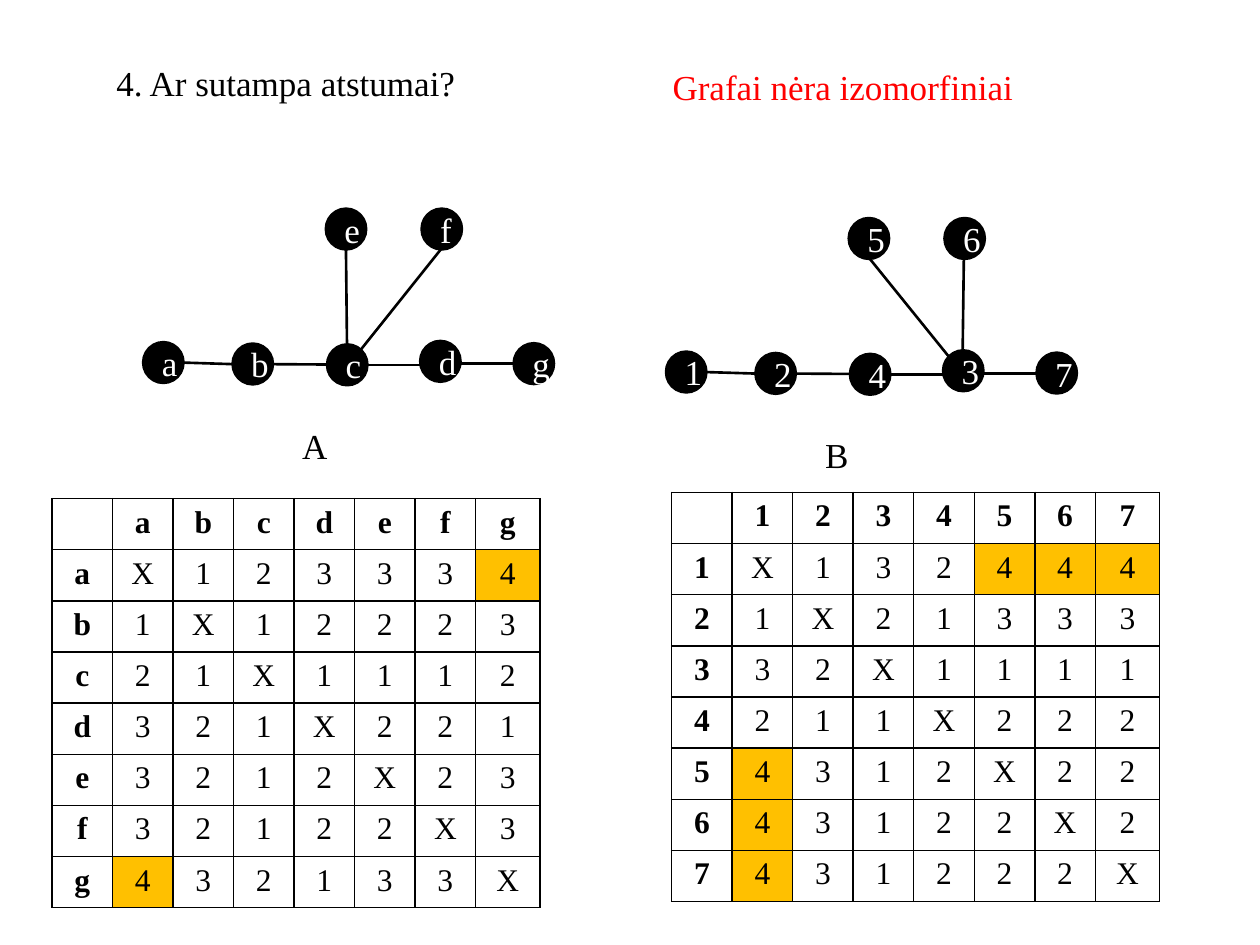
"""Build a slide comparing the distances within two graphs."""

from dataclasses import dataclass

import lxml.etree
import pptx
import pptx.dml.color
import pptx.enum.shapes
import pptx.enum.text
import pptx.oxml.ns
import pptx.util

Pt = pptx.util.Pt
Line = tuple[float, float, float, float]

FONT = "Times New Roman"
COLORS = {"ink": "000000", "paper": "FFFFFF", "alert": "FF0000", "longest": "FFC000"}
NODE_WIDTH, NODE_HEIGHT = 22.5, 22.8
NODE_PLACES = [
    (82.1, 195.8), (133.2, 196.6), (187.2, 197.1), (240.4, 195.1),
    (293.8, 196.4), (186.5, 119.5), (241.2, 119.5),
]
CHAIN: list[Line] = [
    (104.4, 207.2, 133.2, 208.1), (155.5, 208.1, 187.2, 208.3),
    (208.8, 208.6, 240.5, 208.6), (262.8, 207.9, 293.8, 207.9),
]
COLUMN_WIDTHS = [34.6] * 7 + [36.8]
ROW_HEIGHT = 29.25


@dataclass
class Graph:
    name: str
    nodes: str
    branches: list[Line]
    left: float
    top: float


@dataclass
class DistanceTable:
    labels: str
    rows: list[str]
    left: float
    top: float


GRAPHS = [
    Graph("A", "abcdgef",
          [(197.7, 142.4, 198.3, 197.3), (252, 142.4, 205.9, 200.2)], 0, 0),
    Graph("B", "1243756",
          [(198, 142.2, 243.4, 198.4), (252, 142.2, 251.3, 194.8)], 298.8, 5.4),
]
TABLES = [
    DistanceTable("abcdefg",
                  ["X123334", "1X12223", "21X1112", "321X221",
                   "3212X23", "32122X3", "432133X"], 29.7, 284.9),
    DistanceTable("1234567",
                  ["X132444", "1X21333", "32X1111", "211X222",
                   "4312X22", "43122X2", "431222X"], 383.8, 281.4),
]


def rgb(color: str) -> pptx.dml.color.RGBColor:
    return pptx.dml.color.RGBColor.from_string(COLORS[color])


def write(text_frame, text: str, size: float, color: str = "ink",
          centered: bool = False, bold: bool = False) -> None:
    text_frame.text = text
    paragraph = text_frame.paragraphs[0]
    if centered:
        paragraph.alignment = pptx.enum.text.PP_ALIGN.CENTER
    for font in (paragraph.font, *(run.font for run in paragraph.runs)):
        font.name, font.size, font.bold = FONT, Pt(size), bold
        font.color.rgb = rgb(color)


def add_text(slide, text: str, left: float, top: float, width: float,
             color: str = "ink") -> None:
    shape = slide.shapes.add_textbox(Pt(left), Pt(top), Pt(width), Pt(31.5))
    shape.text_frame.word_wrap = True
    write(shape.text_frame, text, 20, color)


def add_node(slide, label: str, left: float, top: float) -> None:
    shape = slide.shapes.add_shape(
        pptx.enum.shapes.MSO_SHAPE.OVAL,
        Pt(left), Pt(top), Pt(NODE_WIDTH), Pt(NODE_HEIGHT))
    shape.shadow.inherit = False
    shape.fill.solid()
    shape.fill.fore_color.rgb = rgb("ink")
    shape.line.color.rgb = rgb("ink")
    shape.line.width = Pt(2)
    write(shape.text_frame, label, 20, "paper", centered=True)


def add_edge(slide, line: Line, left: float, top: float) -> None:
    start_x, start_y, end_x, end_y = line
    connector = slide.shapes.add_connector(
        pptx.enum.shapes.MSO_CONNECTOR.STRAIGHT,
        Pt(left + start_x), Pt(top + start_y), Pt(left + end_x), Pt(top + end_y))
    connector.line.color.rgb = rgb("ink")
    connector.line.width = Pt(1.5)
    lxml.etree.SubElement(connector._element.spPr, pptx.oxml.ns.qn("a:effectLst"))


def add_graph(slide, graph: Graph) -> None:
    for line in CHAIN + graph.branches:
        add_edge(slide, line, graph.left, graph.top)
    for label, (x, y) in zip(graph.nodes, NODE_PLACES):
        add_node(slide, label, graph.left + x, graph.top + y)
    add_text(slide, graph.name, graph.left + 165.6, graph.top + 239, 23)


def add_borders(cell) -> None:
    qn = pptx.oxml.ns.qn
    properties = cell._tc.get_or_add_tcPr()
    for side in ("lnL", "lnR", "lnT", "lnB"):
        border = lxml.etree.SubElement(properties, qn(f"a:{side}"), w=str(Pt(1)))
        fill = lxml.etree.SubElement(border, qn("a:solidFill"))
        lxml.etree.SubElement(fill, qn("a:srgbClr"), val=COLORS["ink"])


def add_distance_table(slide, distances: DistanceTable) -> None:
    rows = [" " + distances.labels]
    rows += [label + row for label, row in zip(distances.labels, distances.rows)]
    table = slide.shapes.add_table(
        len(rows), len(COLUMN_WIDTHS), Pt(distances.left), Pt(distances.top),
        Pt(sum(COLUMN_WIDTHS)), Pt(ROW_HEIGHT * len(rows))).table
    table.first_row = table.horz_banding = False
    for column, width in zip(table.columns, COLUMN_WIDTHS):
        column.width = Pt(width)
    for row_index, row in enumerate(rows):
        table.rows[row_index].height = Pt(ROW_HEIGHT)
        for column_index, text in enumerate(row):
            cell = table.cell(row_index, column_index)
            heading = row_index == 0 or column_index == 0
            write(cell.text_frame, text.strip(), 18, centered=True, bold=heading)
            add_borders(cell)
            if text == "4" and not heading:
                cell.fill.solid()
                cell.fill.fore_color.rgb = rgb("longest")
            else:
                cell.fill.background()


def main() -> None:
    presentation = pptx.Presentation()
    presentation.slide_width, presentation.slide_height = Pt(720), Pt(540)
    slide = presentation.slides.add_slide(presentation.slide_layouts[6])
    add_text(slide, "4. Ar sutampa atstumai?", 59.5, 31.7, 623.5)
    for graph in GRAPHS:
        add_graph(slide, graph)
    for distances in TABLES:
        add_distance_table(slide, distances)
    add_text(slide, "Grafai nėra izomorfiniai", 377.2, 34, 323.3, "alert")
    presentation.save("out.pptx")


if __name__ == "__main__":
    main()
